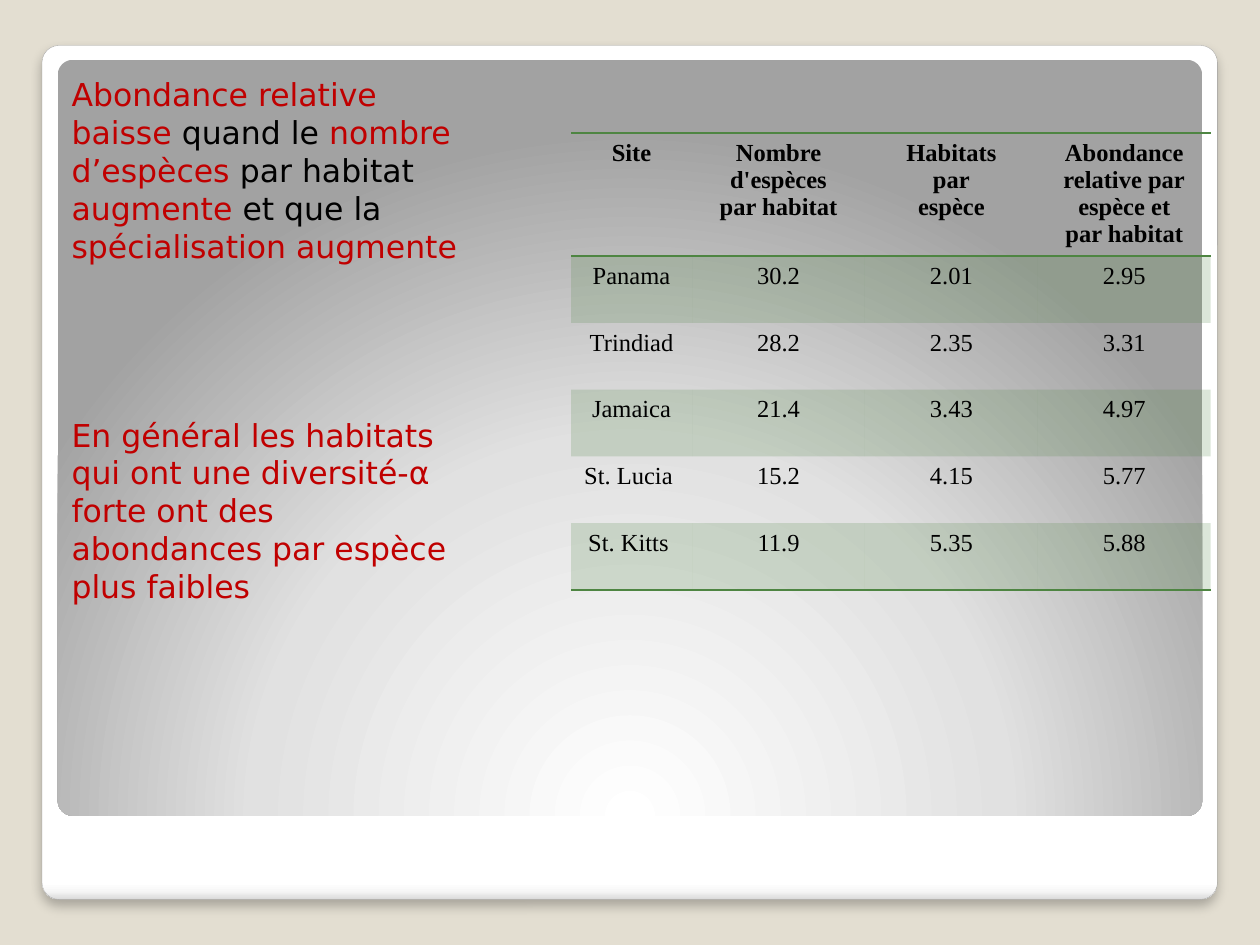
"""Build a slide on species abundance and habitat diversity."""
from lxml import etree
from pptx import Presentation
from pptx import util as u
from pptx.dml.color import RGBColor
from pptx.enum import shapes, text
from pptx.oxml.ns import qn

Pt = u.Pt
RED, BLACK, GREEN = "C00000", "000000", "4E8542"


def color(value):
    return RGBColor.from_string(value)


def add(parent, tag, index=None, **attributes):
    child = etree.Element(qn(tag), {k: str(v) for k, v in attributes.items()})
    parent.insert(len(parent) if index is None else index, child)
    return child


prs = Presentation()
prs.slide_width, prs.slide_height = Pt(720), Pt(540)
slide = prs.slides.add_slide(prs.slide_layouts[6])
slide.background.fill.solid()
slide.background.fill.fore_color.rgb = color("E3DED1")

panels = []
for bounds, stops in [
    ((24, 26, 671.7, 488), [(0, "FFFFFF"), (98, "FFFFFF"), (99, "F7F7F7"), (100, "DADADA")]),
    ((33, 34.2, 654, 432), [(0, "FFFFFF"), (55, "E1E1E1"), (100, "A2A2A2")]),
]:
    panel = slide.shapes.add_shape(shapes.MSO_SHAPE.ROUNDED_RECTANGLE, *map(Pt, bounds))
    panel.adjustments[0] = 0.02
    panel.shadow.inherit = False
    panel.line.fill.background()
    properties = panel._element.spPr
    position = properties.index(properties.find(qn("a:prstGeom"))) + 1
    gradient = add(properties, "a:gradFill", position, rotWithShape=1)
    stop_list = add(gradient, "a:gsLst")
    for place, shade in stops:
        add(add(stop_list, "a:gs", pos=place * 1000), "a:srgbClr", val=shade)
    panels.append((panel, gradient))

(card, card_gradient), (backdrop, backdrop_gradient) = panels
add(card_gradient, "a:lin", ang=5400000, scaled=0)
glow = add(backdrop_gradient, "a:path", path="circle")
add(glow, "a:fillToRect", l=50000, t=175000, r=50000, b=-75000)
card.line.color.rgb = color("A4A4A4")
card.line.width = Pt(0.16)
effects = card._element.spPr.find(qn("a:effectLst"))
shadow = add(effects, "a:outerShdw", blurRad=Pt(6), dist=Pt(4), dir=5400000, rotWithShape=0)
add(add(shadow, "a:srgbClr", val=BLACK), "a:alpha", val=25000)

rows = [
    ["Site", "Nombre\nd'espèces\npar habitat", "Habitats\npar\nespèce",
     "Abondance\nrelative par\nespèce et\npar habitat"],
    ["Panama", "30.2", "2.01", "2.95"],
    ["Trindiad", "28.2", "2.35", "3.31"],
    ["Jamaica", "21.4", "3.43", "4.97"],
    ["St. Lucia ", "15.2", "4.15", "5.77"],
    ["St. Kitts ", "11.9", "5.35", "5.88"],
]
widths = [69.2, 98.8, 98.8, 98.8]
heights = [70.4] + [38.16] * 5
sites = slide.shapes.add_table(
    len(rows), len(widths), Pt(326.3), Pt(76), Pt(sum(widths)), Pt(sum(heights))).table
sites._tbl.tblPr.find(qn("a:tableStyleId")).text = "{2D5ABB26-0587-4C30-8999-92F81FD0307C}"
for column, width in zip(sites.columns, widths):
    column.width = Pt(width)
for r, (row, height) in enumerate(zip(rows, heights)):
    sites.rows[r].height = Pt(height)
    edges = {0: ["a:lnT", "a:lnB"], len(rows) - 1: ["a:lnB"]}.get(r, [])
    for c, entry in enumerate(row):
        cell = sites.cell(r, c)
        cell.text = entry
        for paragraph in cell.text_frame.paragraphs:
            paragraph.alignment = text.PP_ALIGN.CENTER
            font = paragraph.runs[0].font
            font.color.rgb = color(BLACK)
            for name, value in {"name": "Times New Roman", "size": Pt(14), "bold": r == 0}.items():
                setattr(font, name, value)
        cell_properties = cell._tc.get_or_add_tcPr()
        if r % 2:
            cell.fill.solid()
            cell.fill.fore_color.rgb = color(GREEN)
            add(next(cell_properties.iter(qn("a:srgbClr"))), "a:alpha", val=20000)
        else:
            cell.fill.background()
        for i, edge in enumerate(edges):
            border = add(cell_properties, edge, i, w=Pt(1))
            add(add(border, "a:solidFill"), "a:srgbClr", val=GREEN)

findings = [
    [("Abondance relative", RED)],
    [("baisse ", RED), ("quand le ", BLACK), ("nombre d’espèces", RED),
     (" par habitat ", BLACK), ("augmente", RED), (" et que la ", BLACK),
     ("spécialisation augmente", RED)],
    [("En général les habitats", RED)],
    [("qui ont une diversité-α", RED)],
    [("forte ont des", RED)],
    [("abondances par espèce", RED)],
    [("plus faibles", RED)],
]
commentary = slide.shapes.add_textbox(Pt(33.8), Pt(39.6), Pt(236.2), Pt(312.5)).text_frame
commentary.word_wrap = True
for i, finding in enumerate(findings):
    paragraph = commentary.add_paragraph() if i else commentary.paragraphs[0]
    if i == 2:
        paragraph.space_before = Pt(86.4)
    for words, shade in finding:
        run = paragraph.add_run()
        run.text = words
        run.font.color.rgb = color(shade)
        for name, value in {"name": "DejaVu Sans", "size": Pt(18)}.items():
            setattr(run.font, name, value)

prs.save("out.pptx")
